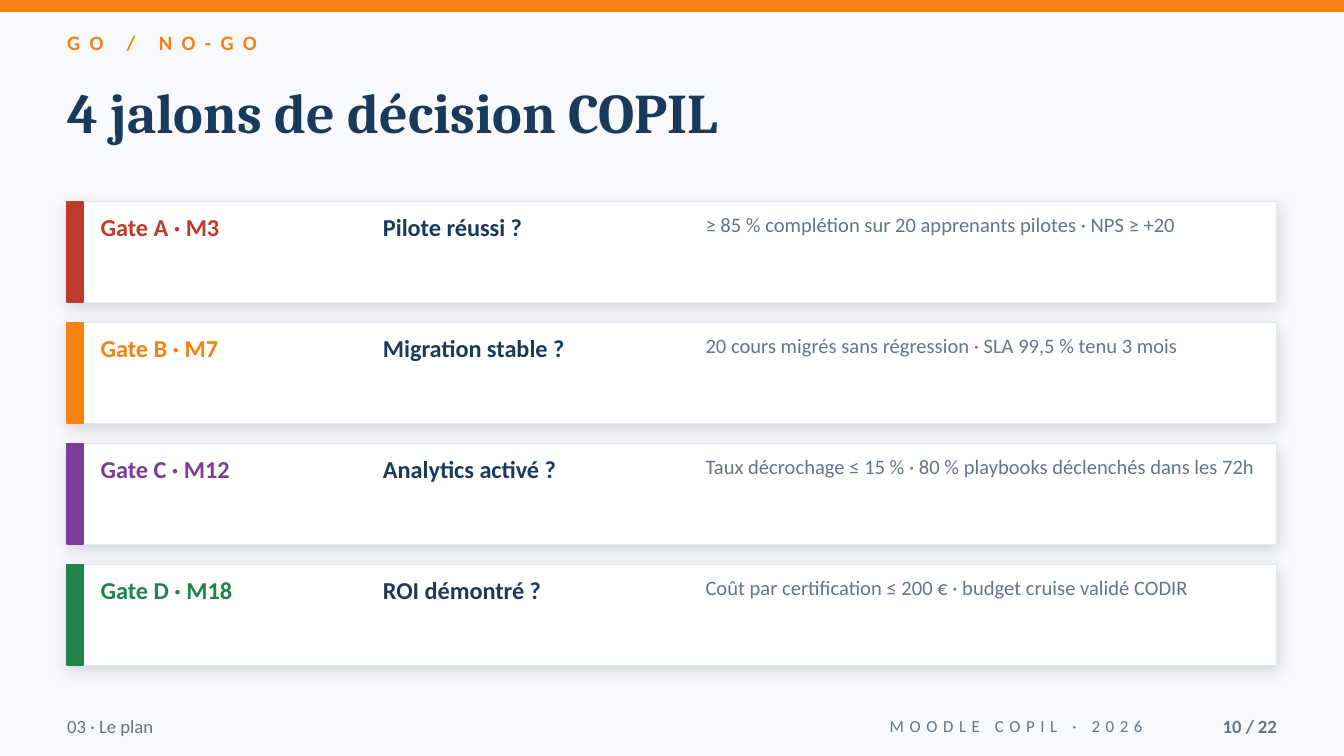
from pptx import Presentation
from pptx.dml.color import RGBColor
from pptx.enum.shapes import MSO_SHAPE as Shape
from pptx.enum.text import MSO_ANCHOR as Anchor, PP_ALIGN as Align
from pptx.oxml import parse_xml
from pptx.oxml.ns import nsdecls
from pptx.util import Inches, Pt

PAPER = RGBColor(0xF7, 0xF9, 0xFC)
WHITE = RGBColor(0xFF, 0xFF, 0xFF)
EDGE = RGBColor(0xE2, 0xE8, 0xF0)
NAVY = RGBColor(0x1A, 0x3A, 0x5C)
SLATE = RGBColor(0x64, 0x74, 0x8B)
ORANGE = RGBColor(0xF9, 0x80, 0x12)
RED = RGBColor(0xC0, 0x39, 0x2B)
PURPLE = RGBColor(0x7D, 0x3C, 0x98)
GREEN = RGBColor(0x1E, 0x84, 0x49)

SHADOW = (
    f'<a:effectLst {nsdecls("a")}>'
    f'<a:outerShdw blurRad="{Pt(8)}" dist="{Pt(2)}" dir="5400000" algn="bl" rotWithShape="0">'
    '<a:srgbClr val="000000"><a:alpha val="15000"/></a:srgbClr>'
    '</a:outerShdw></a:effectLst>'
)

deck = Presentation()
deck.slide_width, deck.slide_height = Inches(10), Inches(5.625)
slide = deck.slides.add_slide(deck.slide_layouts[6])
slide.background.fill.solid()
slide.background.fill.fore_color.rgb = PAPER


def add_rect(left, top, width, height, fill, line, weight=1):
    rect = slide.shapes.add_shape(
        Shape.RECTANGLE, Inches(left), Inches(top), Inches(width), Inches(height))
    rect.shadow.inherit = False
    rect.fill.solid()
    rect.fill.fore_color.rgb = fill
    rect.line.color.rgb = line
    rect.line.width = Pt(weight)
    return rect


def add_text(text, left, top, width, height, size, color, bold=False,
             face="Calibri", align=Align.LEFT, anchor=Anchor.TOP, space=0):
    box = slide.shapes.add_textbox(
        Inches(left), Inches(top), Inches(width), Inches(height))
    frame = box.text_frame
    frame.word_wrap = True
    frame.vertical_anchor = anchor
    frame.margin_left = frame.margin_right = 0
    frame.margin_top = frame.margin_bottom = 0
    para = frame.paragraphs[0]
    para.text = text
    para.alignment = align
    font = para.font
    font.name, font.size, font.bold = face, Pt(size), bold
    font.color.rgb = color
    if space:
        # Letter spacing, in hundredths of a point
        para.runs[0].font._element.set("spc", str(space * 100))


# Top band
add_rect(0, 0, 10, 0.08, ORANGE, ORANGE)

# Footer
add_text("03 · Le plan", 0.5, 5.25, 6, 0.3, 10, SLATE, anchor=Anchor.MIDDLE)
add_text("10 / 22", 8.5, 5.25, 1, 0.3, 10, SLATE, bold=True,
         align=Align.RIGHT, anchor=Anchor.MIDDLE)
add_text("MOODLE COPIL · 2026", 6.6, 5.25, 1.9, 0.3, 9, SLATE,
         align=Align.RIGHT, anchor=Anchor.MIDDLE, space=3)

# Heading
add_text("GO / NO-GO", 0.5, 0.22, 9, 0.3, 11, ORANGE, bold=True, space=5)
add_text("4 jalons de décision COPIL", 0.5, 0.58, 9, 0.75, 30, NAVY,
         bold=True, face="Cambria")

# Gate cards
gates = [
    ("Gate A · M3", "Pilote réussi ?",
     "≥ 85 % complétion sur 20 apprenants pilotes · NPS ≥ +20", RED),
    ("Gate B · M7", "Migration stable ?",
     "20 cours migrés sans régression · SLA 99,5 % tenu 3 mois", ORANGE),
    ("Gate C · M12", "Analytics activé ?",
     "Taux décrochage ≤ 15 % · 80 % playbooks déclenchés dans les 72h", PURPLE),
    ("Gate D · M18", "ROI démontré ?",
     "Coût par certification ≤ 200 € · budget cruise validé CODIR", GREEN),
]
for row, (gate, goal, test, color) in enumerate(gates):
    top = 1.5 + 0.9 * row
    card = add_rect(0.5, top, 9, 0.75, WHITE, EDGE, 0.5)
    props = card._element.spPr
    props.replace(props.find("{*}effectLst"), parse_xml(SHADOW))
    add_rect(0.5, top, 0.12, 0.75, color, color)
    add_text(gate, 0.75, top + 0.08, 2, 0.6, 13, color, bold=True)
    add_text(goal, 2.85, top + 0.08, 2.3, 0.6, 13, NAVY, bold=True)
    add_text(test, 5.25, top + 0.08, 4.1, 0.6, 11, SLATE)

deck.save("out.pptx")
